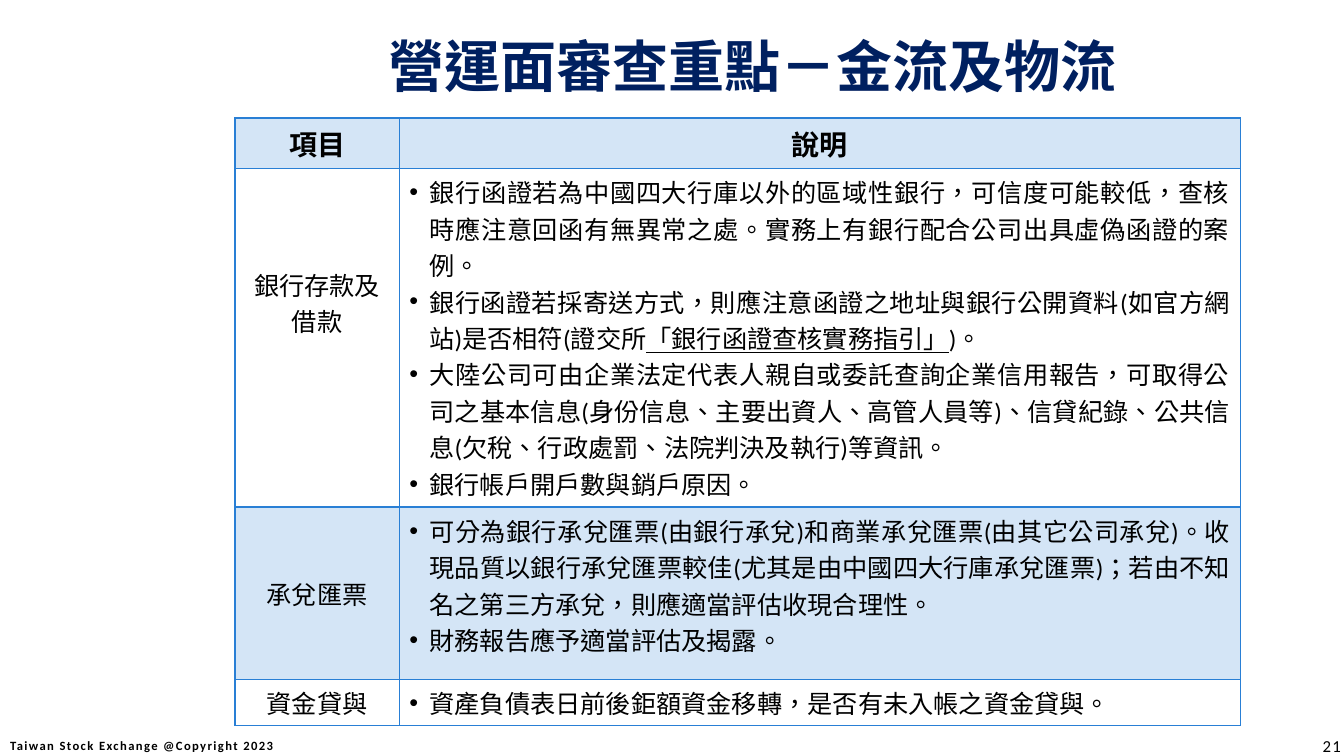
"""Build the slide on reviewing cash flow and goods flow."""
from dataclasses import dataclass

from lxml.etree import SubElement
from pptx import Presentation
from pptx.dml.color import RGBColor
from pptx.enum.text import MSO_ANCHOR, PP_ALIGN
from pptx.oxml import parse_xml
from pptx.oxml.ns import nsdecls, qn
from pptx.util import Inches, Pt

NAVY, BLUE, BLACK = "002060", "297FD5", "000000"
COLUMNS = (1.63, 8.34)
HEADER_HEIGHT = 0.5


@dataclass(frozen=True)
class Run:
    text: str
    underline: bool = False


@dataclass(frozen=True)
class ReviewRow:
    item: str
    points: tuple[tuple[Run, ...], ...]
    height: float
    shaded: bool = False
    item_anchor: MSO_ANCHOR = MSO_ANCHOR.MIDDLE
    item_top: float = 0.05


@dataclass(frozen=True)
class Footer:
    text: str
    left: float
    width: float
    size: float
    align: PP_ALIGN
    bold: bool = False


ROWS = (
    ReviewRow("銀行存款及借款", (
        (Run("銀行函證若為中國四大行庫以外的區域性銀行，可信度可能較低，查核時應注意回函有無異常之處。實務上有銀行配合公司出具虛偽函證的案例。"),),
        (Run("銀行函證若採寄送方式，則應注意函證之地址與銀行公開資料(如官方網站)是否相符(證交所"),
         Run("「銀行函證查核實務指引」", True), Run(")。")),
        (Run("大陸公司可由企業法定代表人親自或委託查詢企業信用報告，可取得公司之基本信息(身份信息、主要出資人、高管人員等)、信貸紀錄、公共信息(欠稅、行政處罰、法院判決及執行)等資訊。"),),
        (Run("銀行帳戶開戶數與銷戶原因。"),),
    ), 3.36, item_anchor=MSO_ANCHOR.TOP, item_top=0.97),
    ReviewRow("承兌匯票", (
        (Run("可分為銀行承兌匯票(由銀行承兌)和商業承兌匯票(由其它公司承兌)。收現品質以銀行承兌匯票較佳(尤其是由中國四大行庫承兌匯票)；若由不知名之第三方承兌，則應適當評估收現合理性。"),),
        (Run("財務報告應予適當評估及揭露。"),),
    ), 1.71, shaded=True),
    ReviewRow("資金貸與", (
        (Run("資產負債表日前後鉅額資金移轉，是否有未入帳之資金貸與。"),),
    ), 0.46),
)
FOOTERS = (
    Footer("Taiwan Stock Exchange @Copyright 2023", 0, 2.81, 9, PP_ALIGN.CENTER, True),
    Footer("21", 12.81, 0.49, 12, PP_ALIGN.RIGHT),
)


def rgb(value: str) -> RGBColor:
    return RGBColor.from_string(value)


def add_run(p, text: str, size: float, color: str = BLACK, bold: bool = False,
            name: str = "Calibri", underline: bool = False, spacing: int = 0) -> None:
    r = p.add_run()
    r.text = text
    r.font.size, r.font.bold, r.font.name = Pt(size), bold, name
    r.font.underline = underline
    r.font.color.rgb = rgb(color)
    props = r._r.get_or_add_rPr()
    props.set("lang", "zh-TW")
    if spacing:
        props.set("spc", str(spacing))


def style_cell(cell, shaded: bool) -> None:
    props = cell._tc.get_or_add_tcPr()
    for side in ("lnL", "lnR", "lnT", "lnB"):
        props.append(parse_xml(
            f'<a:{side} {nsdecls("a")} w="12700"><a:solidFill>'
            f'<a:srgbClr val="{BLUE}"/></a:solidFill></a:{side}>'))
    if shaded:
        cell.fill.solid()
        cell.fill.fore_color.rgb = rgb(BLUE)
        SubElement(props.find(qn("a:solidFill")).find(qn("a:srgbClr")),
                   qn("a:alpha"), val="20000")
    else:
        cell.fill.background()


def add_bullet(p) -> None:
    props = p._p.get_or_add_pPr()
    props.set("marL", str(Inches(0.2)))
    props.set("indent", str(-Inches(0.2)))
    SubElement(props, qn("a:buFont"), typeface="Arial")
    SubElement(props, qn("a:buChar"), char="•")


def fill_label(cell, text: str, size: float, bold: bool = False) -> None:
    p = cell.text_frame.paragraphs[0]
    p.alignment = PP_ALIGN.CENTER
    add_run(p, text, size, bold=bold)


def fill_points(cell, points: tuple[tuple[Run, ...], ...]) -> None:
    tf = cell.text_frame
    for i, runs in enumerate(points):
        p = tf.add_paragraph() if i else tf.paragraphs[0]
        p.alignment = PP_ALIGN.JUSTIFY
        add_bullet(p)
        for run in runs:
            add_run(p, run.text, 18, underline=run.underline)


def add_review_table(s) -> None:
    heights = (HEADER_HEIGHT, *(row.height for row in ROWS))
    table = s.shapes.add_table(len(heights), len(COLUMNS), Inches(2.33), Inches(1.17),
                               Inches(sum(COLUMNS)), Inches(sum(heights))).table
    table.first_row = table.horz_banding = False
    for column, width in zip(table.columns, COLUMNS):
        column.width = Inches(width)
    for row, height in zip(table.rows, heights):
        row.height = Inches(height)
    for i, heading in enumerate(("項目", "說明")):
        style_cell(table.cell(0, i), True)
        fill_label(table.cell(0, i), heading, 20, True)
    for i, row in enumerate(ROWS, 1):
        item, detail = table.cell(i, 0), table.cell(i, 1)
        for cell in (item, detail):
            style_cell(cell, row.shaded)
        item.vertical_anchor = row.item_anchor
        item.margin_top = Inches(row.item_top)
        fill_label(item, row.item, 18)
        fill_points(detail, row.points)


def add_title(s) -> None:
    title = s.shapes.title
    title.left, title.top = Inches(2.39), Inches(0.33)
    title.width, title.height = Inches(10.15), Inches(0.63)
    tf = title.text_frame
    tf.vertical_anchor = MSO_ANCHOR.MIDDLE
    p = tf.paragraphs[0]
    p.alignment = PP_ALIGN.CENTER
    for text, name in (("營運面審查重點", "Vollkorn"), ("－", "Noto Sans CJK SC"),
                       ("金流及物流", "Vollkorn")):
        add_run(p, text, 40, NAVY, True, name)


def add_footer(s, footer: Footer) -> None:
    tf = s.shapes.add_textbox(Inches(footer.left), Inches(7.3),
                              Inches(footer.width), Inches(0.2)).text_frame
    tf.word_wrap = True
    tf.margin_left = tf.margin_right = tf.margin_top = tf.margin_bottom = 0
    tf.vertical_anchor = MSO_ANCHOR.MIDDLE
    p = tf.paragraphs[0]
    p.alignment = footer.align
    add_run(p, footer.text, footer.size, bold=footer.bold, spacing=100)


def main() -> None:
    prs = Presentation()
    prs.slide_width, prs.slide_height = Inches(13.33), Inches(7.5)
    s = prs.slides.add_slide(prs.slide_layouts[5])
    for footer in FOOTERS:
        add_footer(s, footer)
    add_review_table(s)
    add_title(s)
    prs.save("out.pptx")


if __name__ == "__main__":
    main()
